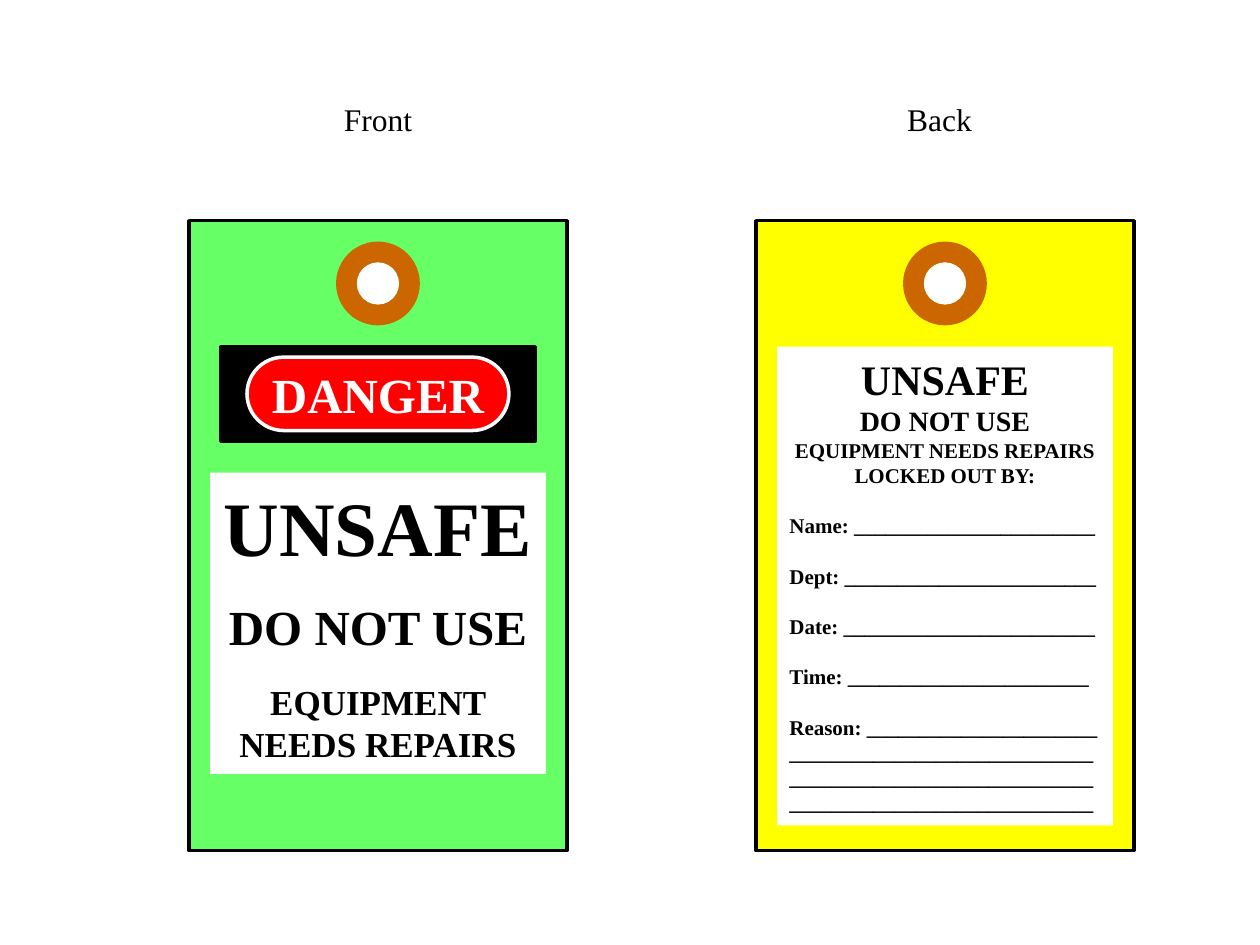
import pptx
import pptx.dml.color
import pptx.enum.shapes
import pptx.enum.text
import pptx.util

Cm = pptx.util.Cm
Pt = pptx.util.Pt
SHAPE = pptx.enum.shapes.MSO_SHAPE
ANCHOR = pptx.enum.text.MSO_ANCHOR
CENTER = pptx.enum.text.PP_ALIGN.CENTER
LEFT = pptx.enum.text.PP_ALIGN.LEFT

FONT = "Times New Roman"
BLACK, WHITE = "000000", "FFFFFF"
GREEN, YELLOW, RED, BROWN = "66FF66", "FFFF00", "FF0000", "CC6600"

TAG_WIDTH, TAG_HEIGHT, TAG_TOP = 7.62, 12.7, 4.45
FRONT_LEFT, BACK_LEFT = 3.81, 15.24
PANEL_WIDTH = 6.77
LINE_HEIGHT = 1.2
BLANK_LINE = 14.4


def rgb(color):
    return pptx.dml.color.RGBColor.from_string(color)


def add_block(shapes, kind, left, top, width, height, fill, line=None):
    shape = shapes.add_shape(kind, Cm(left), Cm(top), Cm(width), Cm(height))
    shape.shadow.inherit = False
    shape.fill.solid()
    shape.fill.fore_color.rgb = rgb(fill)
    if line:
        shape.line.color.rgb = rgb(line)
        shape.line.width = Pt(2)
    else:
        shape.line.fill.background()
    return shape


def write(shape, rows, color=BLACK, bold=True, anchor=ANCHOR.TOP, inset=0.13):
    """Fill a shape with rows of (text, size, alignment, space before)."""
    frame = shape.text_frame
    frame.word_wrap = True
    frame.vertical_anchor = anchor
    frame.margin_left = frame.margin_right = Cm(inset)
    frame.margin_top = frame.margin_bottom = Cm(0.13)
    for index, (text, size, alignment, space) in enumerate(rows):
        paragraph = frame.paragraphs[0] if index == 0 else frame.add_paragraph()
        paragraph.text = text
        paragraph.alignment = alignment
        paragraph.space_before = Pt(space)
        paragraph.line_spacing = Pt(size * LINE_HEIGHT)
        paragraph.font.name = FONT
        paragraph.font.size = Pt(size)
        paragraph.font.bold = bold
        paragraph.font.color.rgb = rgb(color)


def add_label(slide, text, center):
    width = 2.34
    label = slide.shapes.add_textbox(Cm(center - width / 2), Cm(1.88), Cm(width), Cm(1.02))
    write(label, [(text, 18, CENTER, 0)], bold=False, anchor=ANCHOR.MIDDLE)


def add_eyelet(slide, center, top):
    shapes = slide.shapes.add_group_shape().shapes
    outer, hole = 1.69, 0.85
    add_block(shapes, SHAPE.DONUT, center - outer / 2, top, outer, outer, BROWN)
    add_block(shapes, SHAPE.OVAL, center - hole / 2, top + (outer - hole) / 2,
              hole, hole, WHITE)


def add_danger_sign(slide, left, top, width, height):
    shapes = slide.shapes.add_group_shape().shapes
    add_block(shapes, SHAPE.RECTANGLE, left, top, width, height, BLACK, BLACK)
    pill = add_block(shapes, SHAPE.ROUNDED_RECTANGLE, left + 0.53, top + 0.21,
                     width - 1.06, height - 0.42, RED, WHITE)
    pill.adjustments[0] = 0.5
    write(pill, [("DANGER", 28, CENTER, 0)], color=WHITE, anchor=ANCHOR.MIDDLE)


def add_panel(slide, center, top, height, rows):
    panel = add_block(slide.shapes, SHAPE.RECTANGLE, center - PANEL_WIDTH / 2, top,
                      PANEL_WIDTH, height, WHITE)
    write(panel, rows, inset=0.25)


def add_tag(slide, left, top, color):
    add_block(slide.shapes, SHAPE.RECTANGLE, left, top, TAG_WIDTH, TAG_HEIGHT, color, BLACK)
    add_eyelet(slide, left + TAG_WIDTH / 2, top + 0.42)


def add_front(slide, left, top):
    center = left + TAG_WIDTH / 2
    add_label(slide, "Front", center)
    add_tag(slide, left, top, GREEN)
    add_danger_sign(slide, left + 0.64, top + 2.54, TAG_WIDTH - 1.28, 1.9)
    add_panel(slide, center, top + 5.08, 6.07, [
        ("UNSAFE", 44, CENTER, 0),
        ("DO NOT USE", 28, CENTER, BLANK_LINE),
        ("EQUIPMENT NEEDS REPAIRS", 20, CENTER, BLANK_LINE),
    ])


def add_back(slide, left, top):
    center = left + TAG_WIDTH / 2
    add_label(slide, "Back", center - 0.11)
    add_tag(slide, left, top, YELLOW)
    rows = [
        ("UNSAFE", 24, CENTER, 0),
        ("DO NOT USE", 16, CENTER, 0),
        ("EQUIPMENT NEEDS REPAIRS", 12, CENTER, 0),
        ("LOCKED OUT BY:", 12, CENTER, 0),
    ]
    fields = [("Name", 23), ("Dept", 24), ("Date", 24), ("Time", 23), ("Reason", 22)]
    rows += [(f"{name}: " + "_" * count, 12, LEFT, BLANK_LINE) for name, count in fields]
    rows.append(("_" * 87, 12, LEFT, 0))
    add_panel(slide, center, top + 2.54, 9.65, rows)


def main():
    presentation = pptx.Presentation()
    presentation.slide_width = Cm(25.4)
    presentation.slide_height = Cm(19.05)
    slide = presentation.slides.add_slide(presentation.slide_layouts[6])
    add_front(slide, FRONT_LEFT, TAG_TOP)
    add_back(slide, BACK_LEFT, TAG_TOP)
    presentation.save("out.pptx")


if __name__ == "__main__":
    main()
